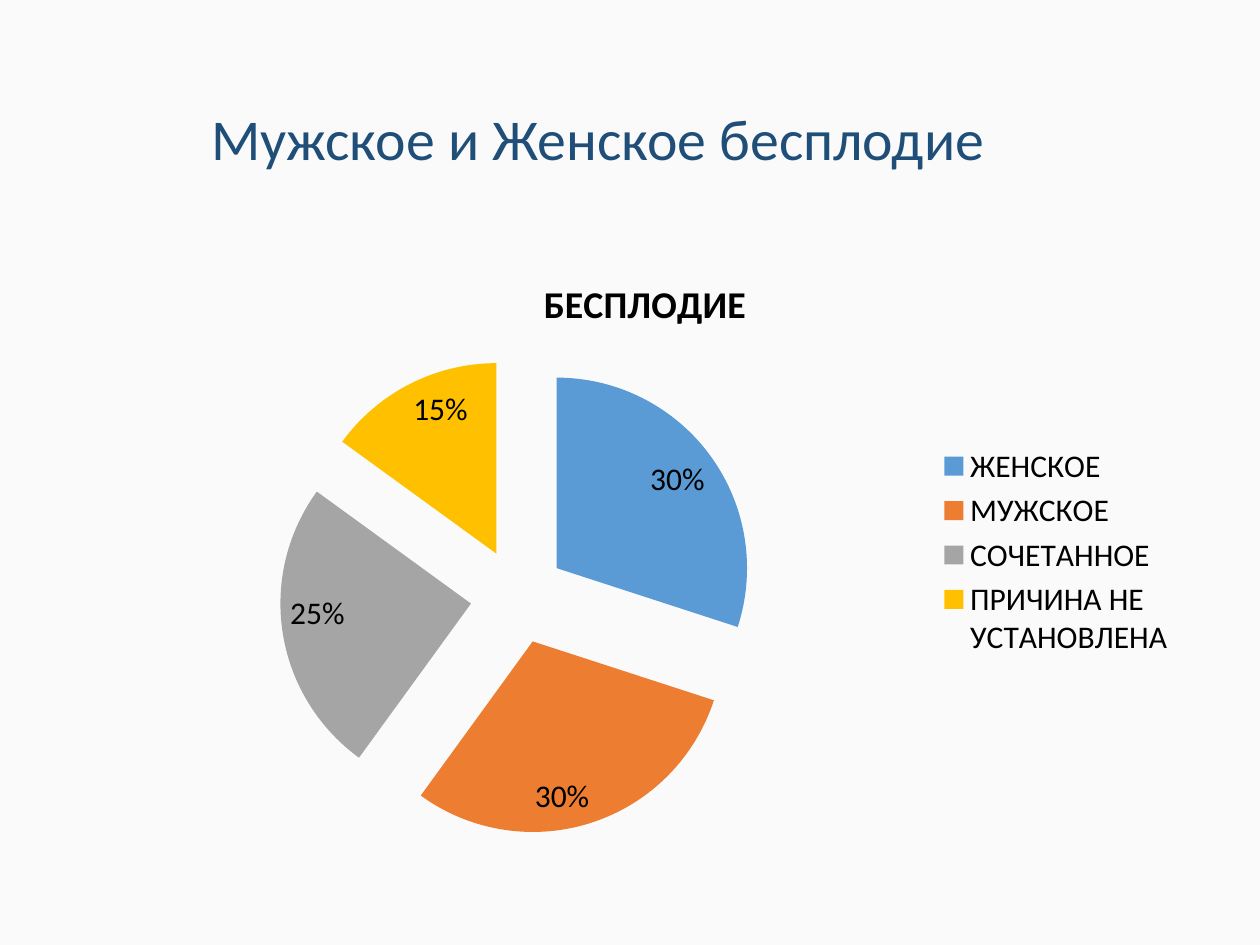
import pptx
import pptx.chart.data
import pptx.dml.color
import pptx.enum.chart
import pptx.enum.text
import pptx.oxml
import pptx.oxml.ns
import pptx.util
from pptx.util import Inches

FONT = "Calibri"
SLICES = [
    ("ЖЕНСКОЕ", 0.30, "5B9BD5"),
    ("МУЖСКОЕ", 0.30, "ED7D31"),
    ("СОЧЕТАННОЕ", 0.25, "A5A5A5"),
    ("ПРИЧИНА НЕ УСТАНОВЛЕНА", 0.15, "FFC000"),
]


def set_fill(fill, color):
    fill.solid()
    fill.fore_color.rgb = pptx.dml.color.RGBColor.from_string(color)


def set_font(font, size, color, bold=False):
    font.name = FONT
    font.size = pptx.util.Pt(size)
    font.bold = bold
    set_fill(font.fill, color)


def add_heading(s, text):
    tf = s.shapes.add_textbox(
        Inches(0.69), Inches(0.4), Inches(8.11), Inches(1.45)).text_frame
    tf.word_wrap = True
    tf.vertical_anchor = pptx.enum.text.MSO_ANCHOR.MIDDLE
    p = tf.paragraphs[0]
    p.text = text
    p.alignment = pptx.enum.text.PP_ALIGN.CENTER
    p.line_spacing = 0.9
    set_font(p.font, 33, "1F4E79")


def explode(series, percent):
    xml = f'<c:explosion {pptx.oxml.ns.nsdecls("c")} val="{percent}"/>'
    tx = series._element.find(pptx.oxml.ns.qn("c:tx"))
    tx.addnext(pptx.oxml.parse_xml(xml))


def add_pie(s, title, slices):
    data = pptx.chart.data.CategoryChartData(number_format="0%")
    data.categories = [name for name, _, _ in slices]
    data.add_series(title, [value for _, value, _ in slices])
    chart = s.shapes.add_chart(
        pptx.enum.chart.XL_CHART_TYPE.PIE,
        Inches(0.81), Inches(2), Inches(8.62), Inches(4.76), data).chart
    set_font(chart.font, 18, "000000")

    # Chart title
    chart.has_title = True
    p = chart.chart_title.text_frame.paragraphs[0]
    p.text = title
    set_font(p.font, 21.6, "000000", bold=True)
    chart.chart_title.include_in_layout = False

    # Legend
    chart.has_legend = True
    chart.legend.position = pptx.enum.chart.XL_LEGEND_POSITION.RIGHT
    chart.legend.include_in_layout = False

    # Slices
    plot = chart.plots[0]
    plot.vary_by_categories = True
    series = plot.series[0]
    explode(series, 25)
    for i, (_, _, color) in enumerate(slices):
        set_fill(series.points[i].format.fill, color)

    # Value labels
    labels = series.data_labels
    labels.show_value = True
    labels.show_percentage = False
    labels.number_format = "0%"
    labels.number_format_is_linked = False
    labels.position = pptx.enum.chart.XL_LABEL_POSITION.INSIDE_END
    set_font(labels.font, 18, "000000")


def main():
    prs = pptx.Presentation()
    prs.slide_width, prs.slide_height = Inches(10), Inches(7.5)
    s = prs.slides.add_slide(prs.slide_layouts[6])
    set_fill(s.background.fill, "FAFAFA")
    add_heading(s, "Мужское и Женское бесплодие")
    add_pie(s, "БЕСПЛОДИЕ", SLICES)
    prs.save("out.pptx")


if __name__ == "__main__":
    main()
